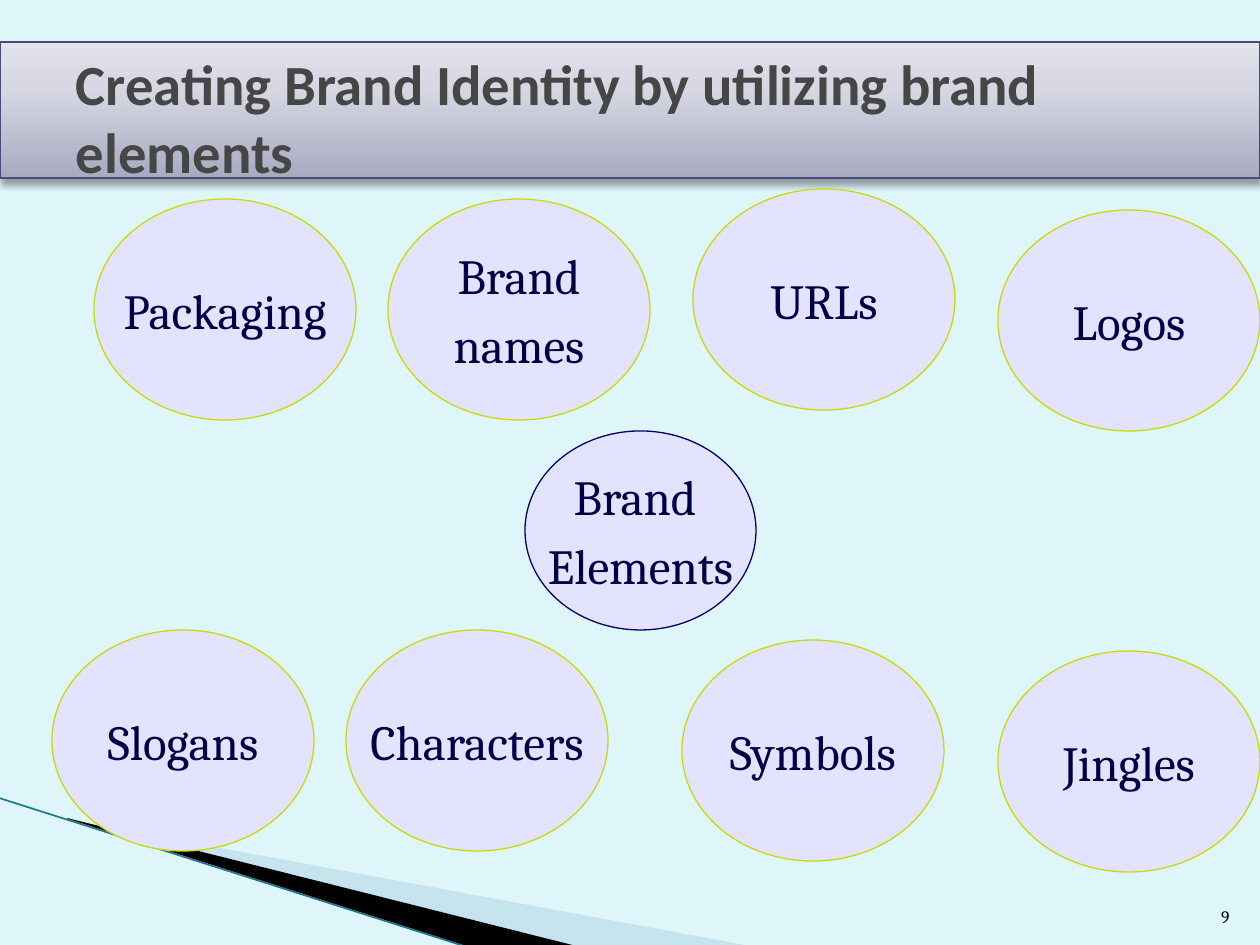
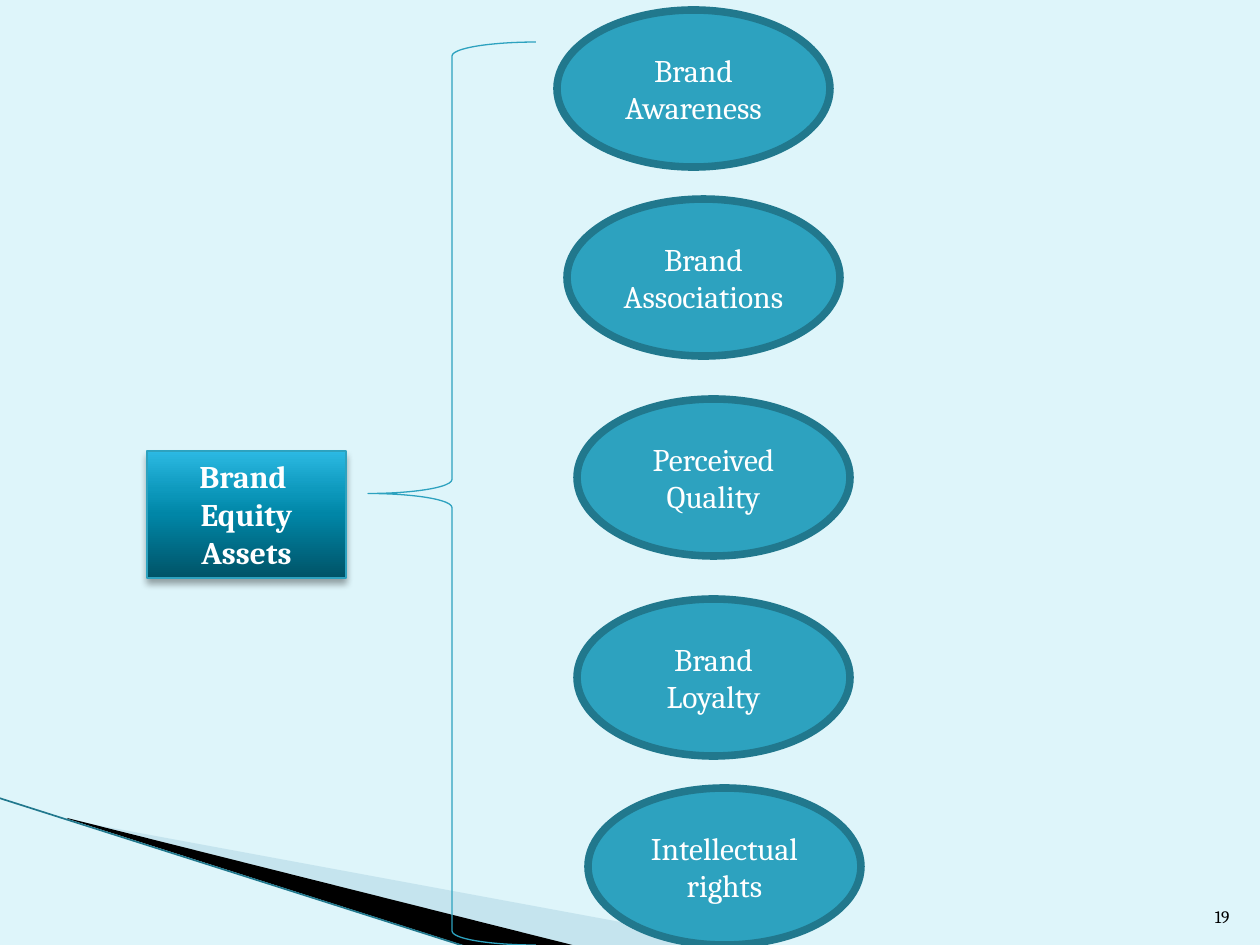
from lxml import etree
from pptx import Presentation, util as u
from pptx.dml.color import RGBColor
from pptx.enum import shapes, text
from pptx.oxml.ns import qn

PX = u.Inches(1) / 126
BACKGROUND = RGBColor(0xDE, 0xF5, 0xFA)
PALE_BLUE = RGBColor(0xA0, 0xCB, 0xDC)
BLACK = RGBColor(0, 0, 0)
WHITE = RGBColor(0xFF, 0xFF, 0xFF)
TITLE_GREY = RGBColor(0x46, 0x46, 0x46)
SLATE = RGBColor(0x47, 0x4B, 0x78)
LAVENDER = RGBColor(0xE3, 0xE3, 0xFF)
LIME = RGBColor(0xC7, 0xDB, 0x07)
NAVY = RGBColor(0, 0, 0x66)
INK = RGBColor(0, 0, 0x46)
TEAL = RGBColor(0x2D, 0xA2, 0xBF)
DARK_TEAL = RGBColor(0x21, 0x78, 0x8D)
BAND_STOPS = [(0, "A8AAC0"), (65, "D6D7E3"), (100, "E2E2EC")]
HUB_STOPS = [(0, "005367"), (50, "0086A7"), (70, "0E9ABE"), (100, "2CB9E3")]
CENTER, LEFT, RIGHT = text.PP_ALIGN.CENTER, text.PP_ALIGN.LEFT, text.PP_ALIGN.RIGHT
MIDDLE, TOP, BOTTOM = text.MSO_ANCHOR.MIDDLE, text.MSO_ANCHOR.TOP, text.MSO_ANCHOR.BOTTOM
KIND = shapes.MSO_SHAPE


def write(tf, lines, size, color, font="Cambria", bold=False, align=CENTER,
          anchor=MIDDLE, wrap=True, gap=0):
    """Fill a text frame, one paragraph per line, with gap points between them."""
    tf.word_wrap = wrap
    tf.auto_size = text.MSO_AUTO_SIZE.NONE
    tf.vertical_anchor = anchor
    for i, line in enumerate(lines):
        p = tf.add_paragraph() if i else tf.paragraphs[0]
        p.alignment = align
        if i and gap:
            p.space_before = u.Pt(gap)
        r = p.add_run()
        r.text = line
        r.font.name, r.font.size, r.font.bold = font, u.Pt(size), bold
        r.font.color.rgb = color


def add_shape(sl, kind, box, fill, line, width=0.75):
    """Add a preset shape at box (left, top, width, height in px)."""
    sp = sl.shapes.add_shape(kind, *[round(v * PX) for v in box])
    sp.shadow.inherit = False
    if fill is None:
        sp.fill.background()
    else:
        sp.fill.solid()
        sp.fill.fore_color.rgb = fill
    sp.line.color.rgb = line
    sp.line.width = u.Pt(width)
    return sp


prs = Presentation()
prs.slide_width, prs.slide_height = round(1260 * PX), round(945 * PX)
TITLE_ONLY, BLANK = prs.slide_layouts[5], prs.slide_layouts[6]

# Shared background, corner swoosh and page number
swoosh = [
    (PALE_BLUE, 40, [(69, 820), (750, 946), (575, 946), (69, 819)]),
    (BLACK, 100, [(67, 818), (576, 946), (469, 947), (68, 819)]),
]
for layout, page in [(TITLE_ONLY, "9"), (BLANK, "19")]:
    sl = prs.slides.add_slide(layout)
    sl.background.fill.solid()
    sl.background.fill.fore_color.rgb = BACKGROUND

    for color, opacity, points in swoosh:
        builder = sl.shapes.build_freeform(*points[0], scale=PX)
        builder.add_line_segments(points[1:])
        sp = builder.convert_to_shape()
        sp.shadow.inherit = False
        sp.fill.solid()
        sp.fill.fore_color.rgb = color
        sp.line.fill.background()
        if opacity < 100:
            clr = next(sp._element.spPr.iter(qn("a:srgbClr")))
            etree.SubElement(clr, qn("a:alpha"), val=str(opacity * 1000))

    edge = sl.shapes.add_connector(
        shapes.MSO_CONNECTOR.STRAIGHT, *[round(v * PX) for v in (-1, 798, 467, 947)])
    edge.line.color.rgb = DARK_TEAL
    edge.line.width = u.Pt(0.95)
    etree.SubElement(edge._element.spPr, qn("a:effectLst"))

    number = sl.shapes.add_textbox(*[round(v * PX) for v in (1192, 883, 50, 50)])
    write(number.text_frame, [page], 10, BLACK, align=RIGHT, anchor=BOTTOM)

elements, assets = prs.slides

# Brand elements
band = add_shape(elements, KIND.RECTANGLE, (0, 42, 1260, 136), LAVENDER, SLATE)
title = elements.shapes.title
title.left, title.top, title.width, title.height = [
    round(v * PX) for v in (63, 38, 1197, 158)]
write(title.text_frame, ["Creating Brand Identity by utilizing brand elements"],
      32.4, TITLE_GREY, font="Calibri", bold=True, align=LEFT)
elements.shapes._spTree.append(title._element)  # in front of the band

element_ovals = [
    (94, 199, ["Packaging"]), (388, 199, ["Brand", "names"]),
    (693, 189, ["URLs"]), (998, 210, ["Logos"]),
    (52, 630, ["Slogans"]), (346, 630, ["Characters"]),
    (682, 640, ["Symbols"]), (998, 651, ["Jingles"]),
]
ovals = [((x, y, 262, 221), LIME, lines) for x, y, lines in element_ovals]
ovals.append(((525, 431, 231, 199), NAVY, ["Brand ", "Elements"]))
for box, outline, lines in ovals:
    sp = add_shape(elements, KIND.OVAL, box, LAVENDER, outline)
    write(sp.text_frame, lines, 28, INK, wrap=False, gap=5.6)

# Brand equity assets
add_shape(assets, KIND.LEFT_BRACE, (368, 42, 168, 903), None, TEAL)
hub = add_shape(assets, KIND.RECTANGLE, (147, 451, 199, 127), TEAL, TEAL)
write(hub.text_frame, ["Brand ", "Equity", "Assets"], 18, WHITE, bold=True, anchor=TOP)

asset_ovals = [
    (557, 10, "Brand Awareness"), (567, 199, "Brand Associations"),
    (577, 399, "Perceived Quality"), (577, 599, "Brand Loyalty"),
    (588, 788, "Intellectual rights"),
]
for x, y, label in asset_ovals:
    sp = add_shape(assets, KIND.OVAL, (x, y, 273, 157), TEAL, DARK_TEAL, 4.33)
    write(sp.text_frame, [label], 18, WHITE)

# Upward gradient and soft shadow on the raised rectangles
for sp, stops in [(band, BAND_STOPS), (hub, HUB_STOPS)]:
    sp.fill.gradient()
    sp.fill.gradient_angle = 90
    spPr = sp._element.spPr
    stop_list = next(spPr.iter(qn("a:gsLst")))
    for gs in list(stop_list):
        stop_list.remove(gs)
    for position, color in stops:
        gs = etree.SubElement(stop_list, qn("a:gs"), pos=str(position * 1000))
        etree.SubElement(gs, qn("a:srgbClr"), val=color)
    shadow = etree.SubElement(
        spPr.find(qn("a:effectLst")), qn("a:outerShdw"), blurRad=str(u.Pt(4)),
        dist=str(u.Pt(3)), dir="5400000", rotWithShape="0")
    clr = etree.SubElement(shadow, qn("a:srgbClr"), val="000000")
    etree.SubElement(clr, qn("a:alpha"), val="35000")

prs.save("out.pptx")
